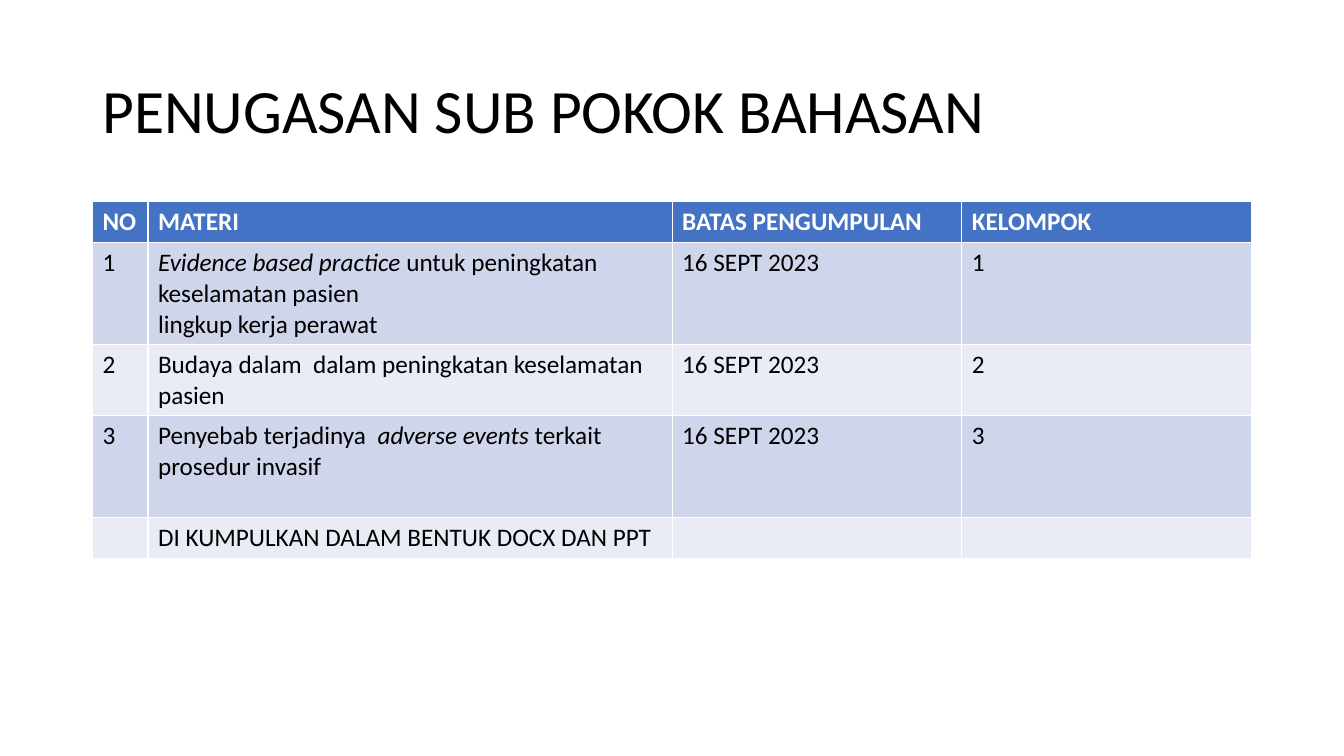
"""Build the slide listing the subtopic assignments, their deadlines and groups."""
from dataclasses import dataclass

import pptx
import pptx.dml.color
import pptx.enum.text
import pptx.table
import pptx.text.text
import pptx.util
from pptx.dml.color import RGBColor
from pptx.util import Cm

BLACK = RGBColor(0x00, 0x00, 0x00)
WHITE = RGBColor(0xFF, 0xFF, 0xFF)
HEADER_BLUE = RGBColor(0x44, 0x72, 0xC4)
BAND_DARK = RGBColor(0xCF, 0xD5, 0xEA)
BAND_LIGHT = RGBColor(0xE9, 0xEB, 0xF5)

FONT = "Calibri"
LEFT, WIDTH = Cm(2.33), Cm(29.21)
COLUMN_WIDTHS = (Cm(1.4), Cm(13.21), Cm(7.3), Cm(7.3))
HEADERS = ("NO", "MATERI", "BATAS PENGUMPULAN", "KELOMPOK")
HEADER_HEIGHT = Cm(1.03)
DEADLINE = "16 SEPT 2023"


@dataclass(frozen=True)
class Phrase:
    text: str
    italic: bool = False


@dataclass(frozen=True)
class Assignment:
    topic: tuple[tuple[Phrase, ...], ...]
    height: Cm
    number: str = ""
    deadline: str = ""


ASSIGNMENTS = (
    Assignment(
        (
            (
                Phrase("Evidence based practice", italic=True),
                Phrase(" untuk peningkatan keselamatan pasien"),
            ),
            (Phrase("lingkup kerja perawat"),),
        ),
        Cm(2.57), "1", DEADLINE,
    ),
    Assignment(
        ((Phrase("Budaya dalam  dalam peningkatan keselamatan pasien"),),),
        Cm(1.8), "2", DEADLINE,
    ),
    Assignment(
        (
            (
                Phrase("Penyebab terjadinya  "),
                Phrase("adverse events ", italic=True),
                Phrase("terkait prosedur invasif"),
            ),
        ),
        Cm(2.57), "3", DEADLINE,
    ),
    Assignment(((Phrase("DI KUMPULKAN DALAM BENTUK DOCX DAN PPT"),),), Cm(1.03)),
)


def style_font(font: pptx.text.text.Font, size: int, color: RGBColor, bold: bool = False) -> None:
    font.name = FONT
    font.size = pptx.util.Pt(size)
    font.bold = bold
    font.color.rgb = color


def fill_cell(
    cell: pptx.table._Cell,
    lines: tuple[tuple[Phrase, ...], ...],
    background: RGBColor,
    color: RGBColor = BLACK,
    bold: bool = False,
) -> None:
    cell.fill.solid()
    cell.fill.fore_color.rgb = background
    for index, phrases in enumerate(lines):
        frame = cell.text_frame
        paragraph = frame.add_paragraph() if index else frame.paragraphs[0]
        for phrase in phrases:
            run = paragraph.add_run()
            run.text = phrase.text
            style_font(run.font, 18, color, bold)
            run.font.italic = phrase.italic


def plain(text: str) -> tuple[tuple[Phrase, ...], ...]:
    return ((Phrase(text),),) if text else ()


def add_heading(slide: pptx.slide.Slide) -> None:
    heading = slide.shapes.add_textbox(LEFT, Cm(1.01), WIDTH, Cm(3.68))
    frame = heading.text_frame
    frame.word_wrap = True
    frame.vertical_anchor = pptx.enum.text.MSO_ANCHOR.MIDDLE
    frame.text = "PENUGASAN SUB POKOK BAHASAN"
    frame.paragraphs[0].line_spacing = 0.9
    style_font(frame.paragraphs[0].runs[0].font, 44, BLACK)


def add_schedule(slide: pptx.slide.Slide) -> None:
    heights = (HEADER_HEIGHT, *(assignment.height for assignment in ASSIGNMENTS))
    schedule = slide.shapes.add_table(
        len(heights), len(HEADERS), LEFT, Cm(5.08), WIDTH, sum(heights)
    ).table
    for column, width in zip(schedule.columns, COLUMN_WIDTHS):
        column.width = width
    for row, height in zip(schedule.rows, heights):
        row.height = height
    for column, header in enumerate(HEADERS):
        fill_cell(schedule.cell(0, column), plain(header), HEADER_BLUE, WHITE, bold=True)
    for row, assignment in enumerate(ASSIGNMENTS, start=1):
        band = BAND_DARK if row % 2 else BAND_LIGHT
        number = plain(assignment.number)
        contents = (number, assignment.topic, plain(assignment.deadline), number)
        for column, lines in enumerate(contents):
            fill_cell(schedule.cell(row, column), lines, band)


def main() -> None:
    presentation = pptx.Presentation()
    presentation.slide_width = Cm(33.87)
    presentation.slide_height = Cm(19.05)
    slide = presentation.slides.add_slide(presentation.slide_layouts[6])
    add_heading(slide)
    add_schedule(slide)
    presentation.save("out.pptx")


if __name__ == "__main__":
    main()
